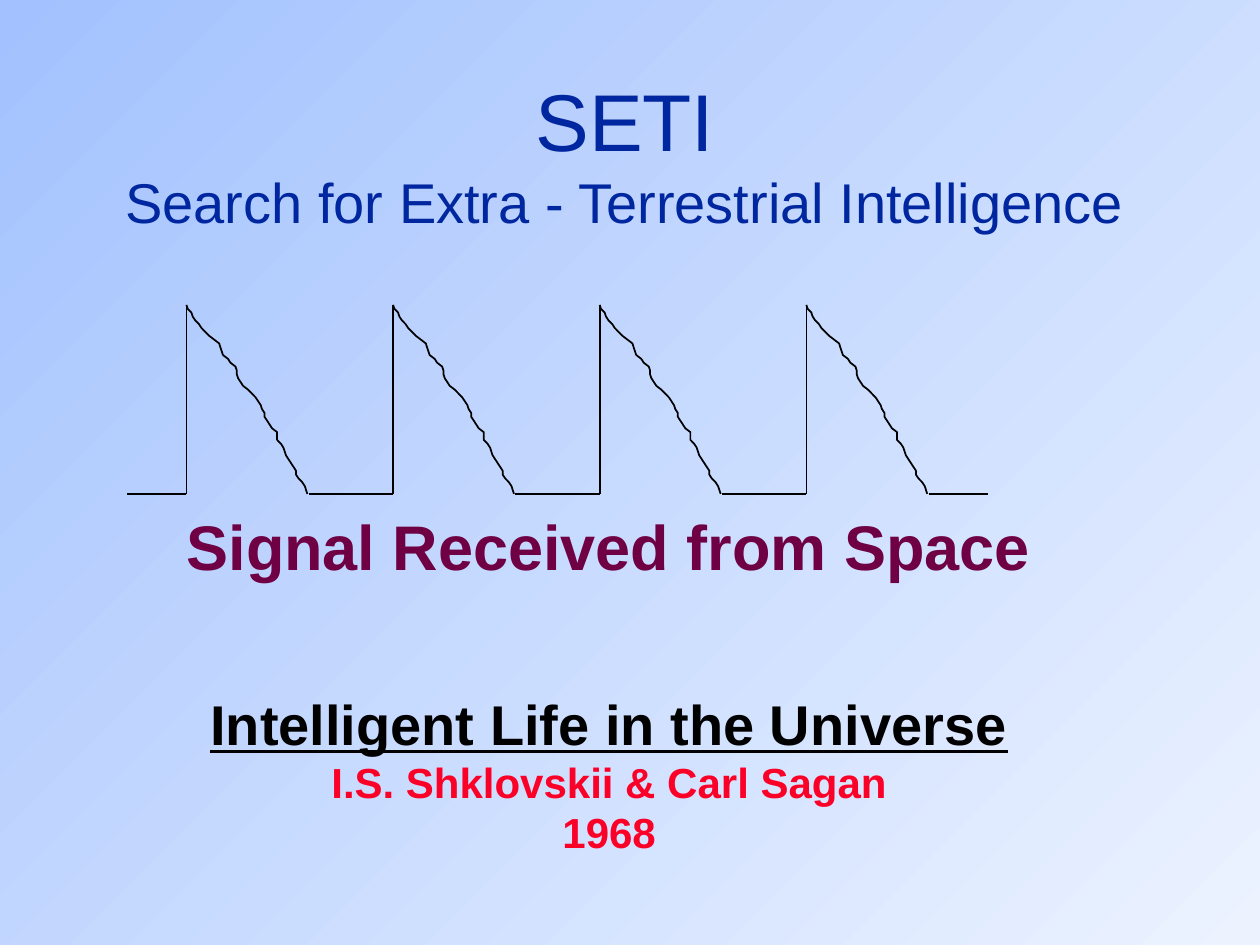
import pptx
import pptx.dml.color
import pptx.enum.shapes
import pptx.enum.text
import pptx.oxml
import pptx.oxml.ns
import pptx.util

Inches = pptx.util.Inches
ANCHOR = pptx.enum.text.MSO_ANCHOR

COLORS = {
    "sky": "A2C1FE", "haze": "ECF3FF", "heading": "00279F",
    "caption": "6E0043", "ink": "000000", "authors": "FC0128",
}
FONT = "Arial"

# Each block: left, top, width, height, anchor, paragraphs (text, run styles).
# A run style is size, colour, bold, underline; \v breaks a line.
BLOCKS = [
    (0.17, 0.25, 9.58, 1.92, ANCHOR.MIDDLE, [
        ("SETI\vSearch for Extra - Terrestrial Intelligence",
         [(46, "heading", False, False), (32, "heading", False, False)]),
    ]),
    (0.58, 4.08, 8.5, 0.5, ANCHOR.MIDDLE, [
        ("Signal Received from Space", [(36, "caption", True, False)]),
    ]),
    (1.5, 5.42, 6.67, 1.45, ANCHOR.TOP, [
        ("Intelligent Life in the Universe", [(32, "ink", True, True)]),
        ("I.S. Shklovskii & Carl Sagan", [(24, "authors", True, False)]),
        ("1968", [(24, "authors", True, False)]),
    ]),
]

PULSES = 4
FIRST_PULSE, PULSE_PITCH = 1.48, 1.64
PEAK, BASELINE = 2.42, 3.92
LEAD, DECAY_WIDTH = 0.47, 0.97
# Distance from the rising edge, in hundredths of an inch, at equal drops.
DECAY = [
    0, 1, 4, 5, 7, 10, 12, 15, 18, 22,
    26, 27, 28, 29, 33, 35, 39, 40, 40, 41,
    43, 45, 49, 52, 55, 57, 59, 60, 62, 62,
    64, 66, 68, 72, 72, 72, 75, 77, 78, 79,
    81, 83, 85, 87, 87, 89, 92, 94, 95, 96,
]


def rgb(name):
    return pptx.dml.color.RGBColor.from_string(COLORS[name])


def paint_background(slide):
    fill = slide.background.fill
    fill.gradient()
    fill.gradient_angle = 315  # counter-clockwise: top left to bottom right
    for stop, position, name in zip(fill.gradient_stops, (0, 1), ("sky", "haze")):
        stop.position = position
        stop.color.rgb = rgb(name)


def add_block(slide, left, top, width, height, anchor, paragraphs):
    box = slide.shapes.add_textbox(*map(Inches, (left, top, width, height)))
    frame = box.text_frame
    frame.word_wrap = True
    frame.vertical_anchor = anchor
    for index, (text, styles) in enumerate(paragraphs):
        paragraph = frame.add_paragraph() if index else frame.paragraphs[0]
        paragraph.text = text
        paragraph.alignment = pptx.enum.text.PP_ALIGN.CENTER
        for run, (size, color, bold, underline) in zip(paragraph.runs, styles):
            run.font.name = FONT
            run.font.size = pptx.util.Pt(size)
            run.font.color.rgb = rgb(color)
            run.font.bold = bold
            run.font.underline = underline


def ink(stroke):
    stroke.line.color.rgb = rgb("ink")
    stroke.line.width = pptx.util.Pt(1)


def add_line(signal, x1, y1, x2, y2):
    line = signal.shapes.add_connector(
        pptx.enum.shapes.MSO_CONNECTOR.STRAIGHT, *map(Inches, (x1, y1, x2, y2)))
    ink(line)
    effects = pptx.oxml.parse_xml(
        "<a:effectLst %s/>" % pptx.oxml.ns.nsdecls("a"))
    line._element.spPr.append(effects)


def add_pulse(signal, edge):
    """Draw the lead-in, rising edge, ragged decay and tail of one pulse."""
    add_line(signal, edge - LEAD, BASELINE, edge, BASELINE)
    add_line(signal, edge, BASELINE, edge, PEAK)
    drop = (BASELINE - PEAK) / (len(DECAY) - 1)
    points = [(Inches(edge + offset / 100), Inches(PEAK + step * drop))
              for step, offset in enumerate(DECAY)]
    builder = signal.shapes.build_freeform(*points[0])
    builder.add_line_segments(points[1:], close=False)
    decay = builder.convert_to_shape()
    decay.fill.background()
    decay.shadow.inherit = False
    ink(decay)
    tail = edge + DECAY_WIDTH
    add_line(signal, tail, BASELINE, tail + LEAD, BASELINE)


def main():
    deck = pptx.Presentation()
    deck.slide_width, deck.slide_height = Inches(10), Inches(7.5)
    slide = deck.slides.add_slide(deck.slide_layouts[6])
    paint_background(slide)
    signal = slide.shapes.add_group_shape()
    for number in range(PULSES):
        add_pulse(signal, FIRST_PULSE + number * PULSE_PITCH)
    for block in BLOCKS:
        add_block(slide, *block)
    deck.save("out.pptx")


if __name__ == "__main__":
    main()
